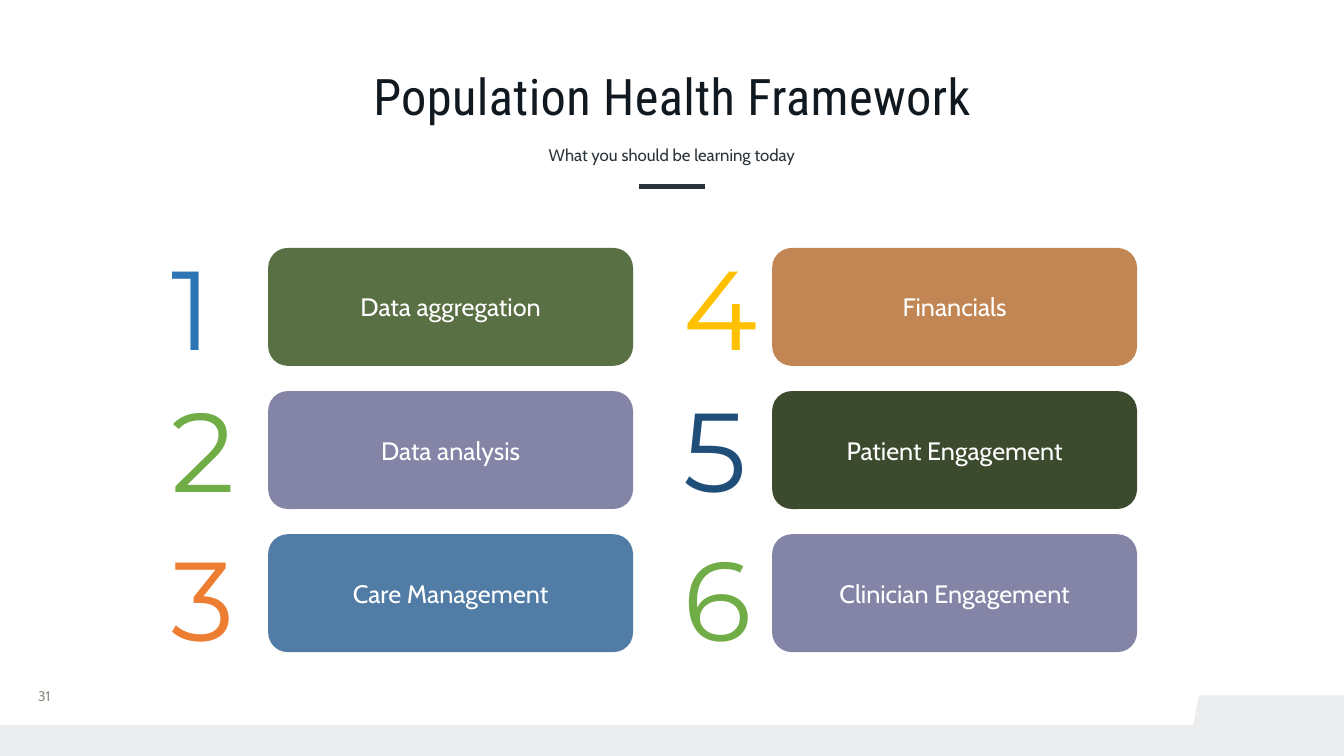
import pptx
import pptx.dml.color
import pptx.enum.shapes
import pptx.enum.text
import pptx.oxml
import pptx.util

RGBColor = pptx.dml.color.RGBColor
SHAPE = pptx.enum.shapes.MSO_SHAPE
ALIGN = pptx.enum.text.PP_ALIGN
ANCHOR = pptx.enum.text.MSO_ANCHOR

INK = RGBColor(0x10, 0x18, 0x20)
SLATE = RGBColor(0x2B, 0x33, 0x3A)
STONE = RGBColor(0x94, 0x8D, 0x86)
MIST = RGBColor(0xEB, 0xED, 0xEE)
WHITE = RGBColor(0xFF, 0xFF, 0xFF)
MOSS = RGBColor(0x59, 0x6F, 0x44)
LAVENDER = RGBColor(0x84, 0x84, 0xA7)
STEEL = RGBColor(0x51, 0x7C, 0xA6)
COPPER = RGBColor(0xC1, 0x86, 0x54)
FOREST = RGBColor(0x3C, 0x4A, 0x2D)
BLUE = RGBColor(0x2E, 0x75, 0xB6)
GREEN = RGBColor(0x70, 0xAD, 0x47)
ORANGE = RGBColor(0xED, 0x7D, 0x31)
GOLD = RGBColor(0xFF, 0xC0, 0x00)
NAVY = RGBColor(0x1F, 0x4E, 0x79)

COLUMNS, ROWS = 160, 90
TOPICS_PER_COLUMN = 3
NUMERAL_TOPS = (27.8, 44.76, 62.4)
TOPICS = (
    ("Data aggregation", MOSS, BLUE),
    ("Data analysis", LAVENDER, GREEN),
    ("Care Management", STEEL, ORANGE),
    ("Financials", COPPER, GOLD),
    ("Patient Engagement", FOREST, NAVY),
    ("Clinician Engagement", LAVENDER, GREEN),
)


class FrameworkSlide:
    heading_font = "Roboto Condensed"
    body_font = "Cabin"
    numeral_font = "Montserrat"

    def __init__(self, deck):
        self.slide = deck.slides.add_slide(deck.slide_layouts[6])
        self.column = deck.slide_width / COLUMNS
        self.row = deck.slide_height / ROWS

    def place(self, left, top, width, height):
        return (round(left * self.column), round(top * self.row),
                round(width * self.column), round(height * self.row))

    def set_words(self, frame, words, size, color, font, align, spacing=None):
        frame.word_wrap = True
        paragraph = frame.paragraphs[0]
        paragraph.text = words
        paragraph.alignment = align
        if spacing:
            paragraph.line_spacing = spacing
        paragraph.font.size = pptx.util.Pt(size)
        paragraph.font.name = font
        paragraph.font.color.rgb = color
        return paragraph

    def block(self, preset, area, fill, mirrored=False):
        block = self.slide.shapes.add_shape(preset, *self.place(*area))
        block.shadow.inherit = False
        block.fill.solid()
        block.fill.fore_color.rgb = fill
        block.line.fill.background()
        if mirrored:
            block._element.spPr.xfrm.set("flipH", "1")
        return block

    def card(self, area, words, fill):
        frame = self.block(SHAPE.ROUNDED_RECTANGLE, area, fill).text_frame
        frame.vertical_anchor = ANCHOR.MIDDLE
        self.set_words(frame, words, 18, WHITE, self.body_font, ALIGN.CENTER)

    def label(self, area, words, size, color, font, align=ALIGN.LEFT,
              spacing=None, anchor=ANCHOR.TOP, tracking=None):
        frame = self.slide.shapes.add_textbox(*self.place(*area)).text_frame
        frame.vertical_anchor = anchor
        paragraph = self.set_words(frame, words, size, color, font, align, spacing)
        if tracking:
            paragraph.runs[0]._r.get_or_add_rPr().set("spc", str(tracking))

    def rule(self, left, right, top, color, weight):
        x, y, width, _ = self.place(left, top, right - left, 0)
        rule = self.slide.shapes.add_connector(
            pptx.enum.shapes.MSO_CONNECTOR.STRAIGHT, x, y, x + width, y)
        rule.line.color.rgb = color
        rule.line.width = pptx.util.Pt(weight)
        rule._element.spPr.append(pptx.oxml.parse_xml(
            '<a:effectLst xmlns:a="http://schemas.openxmlformats.org/drawingml/2006/main"/>'))


def main():
    deck = pptx.Presentation()
    deck.slide_width = pptx.util.Inches(13.33)
    deck.slide_height = pptx.util.Inches(7.5)
    page = FrameworkSlide(deck)

    page.block(SHAPE.RIGHT_TRIANGLE, (141.4, 82.8, 1.32, 7.2), MIST, mirrored=True)
    page.block(SHAPE.RECTANGLE, (142.72, 82.8, 17.28, 7.2), MIST)
    page.block(SHAPE.RECTANGLE, (0, 86.28, COLUMNS, 3.72), MIST)
    page.label((3.36, 79.68, 36, 4.8), "31", 10, STONE, page.body_font,
               anchor=ANCHOR.BOTTOM)

    page.label((39.5, 7.92, 81.1, 7.8), "Population Health Framework", 36, INK,
               page.heading_font, ALIGN.CENTER, 0.9, tracking=30)
    page.label((30.1, 15.72, 99.8, 4.32), "What you should be learning today", 12,
               SLATE, page.body_font, ALIGN.CENTER, 1.4)
    page.rule(76.1, 83.9, 22.2, SLATE, 3)

    for index, (topic, fill, numeral_color) in enumerate(TOPICS):
        side, level = divmod(index, TOPICS_PER_COLUMN)
        page.card((31.92 + 60 * side, 29.52 + 17.04 * level, 43.44, 14.04),
                  topic, fill)
        page.label((19.2 + 61 * side, NUMERAL_TOPS[level], 14.04, 17.4),
                   str(index + 1), 80, numeral_color, page.numeral_font)

    deck.save("out.pptx")


if __name__ == "__main__":
    main()
